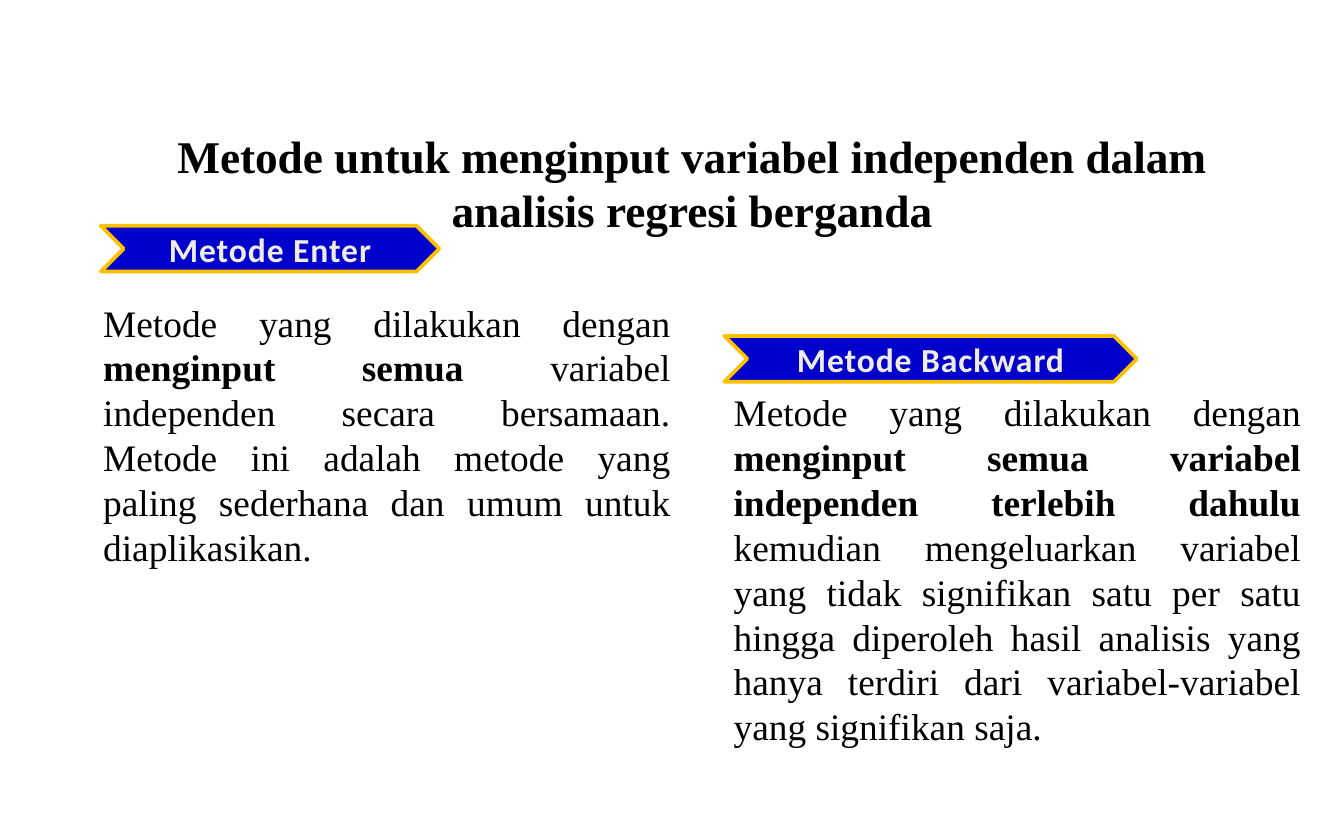
from pptx import Presentation
from pptx.dml.color import RGBColor
from pptx.enum.shapes import MSO_SHAPE
from pptx.enum.text import MSO_ANCHOR, PP_ALIGN
from pptx.util import Pt

SERIF = "Times New Roman"


def color(value):
    return RGBColor.from_string(value)


def style(r, name, size, value, bold):
    r.font.name = name
    r.font.size = Pt(size)
    r.font.color.rgb = color(value)
    r.font.bold = bold


prs = Presentation()
prs.slide_width, prs.slide_height = Pt(720), Pt(450)
s = prs.slides.add_slide(prs.slide_layouts[6])

# Title
sp = s.shapes.add_textbox(Pt(46.8), Pt(65.4), Pt(648), Pt(65.2))
tf = sp.text_frame
tf.word_wrap = True
tf.vertical_anchor = MSO_ANCHOR.MIDDLE
tf.text = "Metode untuk menginput variabel independen dalam analisis regresi berganda"
p = tf.paragraphs[0]
p.alignment = PP_ALIGN.CENTER
p.line_spacing = Pt(29)
style(p.runs[0], SERIF, 24.3, "000000", True)

# Descriptions: left, top, then plain, bold and plain text
descriptions = [
    (48.2, 157, "Metode yang dilakukan dengan ", "menginput semua ",
     "variabel independen secara bersamaan. Metode ini adalah metode yang "
     "paling sederhana dan umum untuk diaplikasikan."),
    (385.9, 205.2, "Metode yang dilakukan dengan ",
     "menginput semua variabel independen terlebih dahulu ",
     "kemudian mengeluarkan variabel yang tidak signifikan satu per satu "
     "hingga diperoleh hasil analisis yang hanya terdiri dari "
     "variabel-variabel yang signifikan saja."),
]
for left, top, *parts in descriptions:
    sp = s.shapes.add_textbox(Pt(left), Pt(top), Pt(318.2), Pt(247.7))
    tf = sp.text_frame
    tf.word_wrap = True
    p = tf.paragraphs[0]
    p.alignment = PP_ALIGN.JUSTIFY
    p.line_spacing = Pt(24)
    for i, part in enumerate(parts):
        r = p.add_run()
        r.text = part
        style(r, SERIF, 20, "000000", i == 1)

# Method labels
labels = [
    ("Metode Enter", 54, 121, 181.4),
    ("Metode Backward", 388.1, 180, 221),
]
for text, left, top, width in labels:
    sp = s.shapes.add_shape(MSO_SHAPE.CHEVRON, Pt(left), Pt(top), Pt(width), Pt(24.5))
    sp.shadow.inherit = False
    sp.fill.solid()
    sp.fill.fore_color.rgb = color("0000CC")
    sp.line.color.rgb = color("FFC000")
    sp.line.width = Pt(2)
    tf = sp.text_frame
    tf.word_wrap = False
    tf.vertical_anchor = MSO_ANCHOR.MIDDLE
    tf.text = text
    p = tf.paragraphs[0]
    p.alignment = PP_ALIGN.CENTER
    r = p.runs[0]
    style(r, "Calibri", 18, "EEECE1", True)
    r.font._element.set("spc", "50")  # letter spacing of half a point

prs.save("out.pptx")
